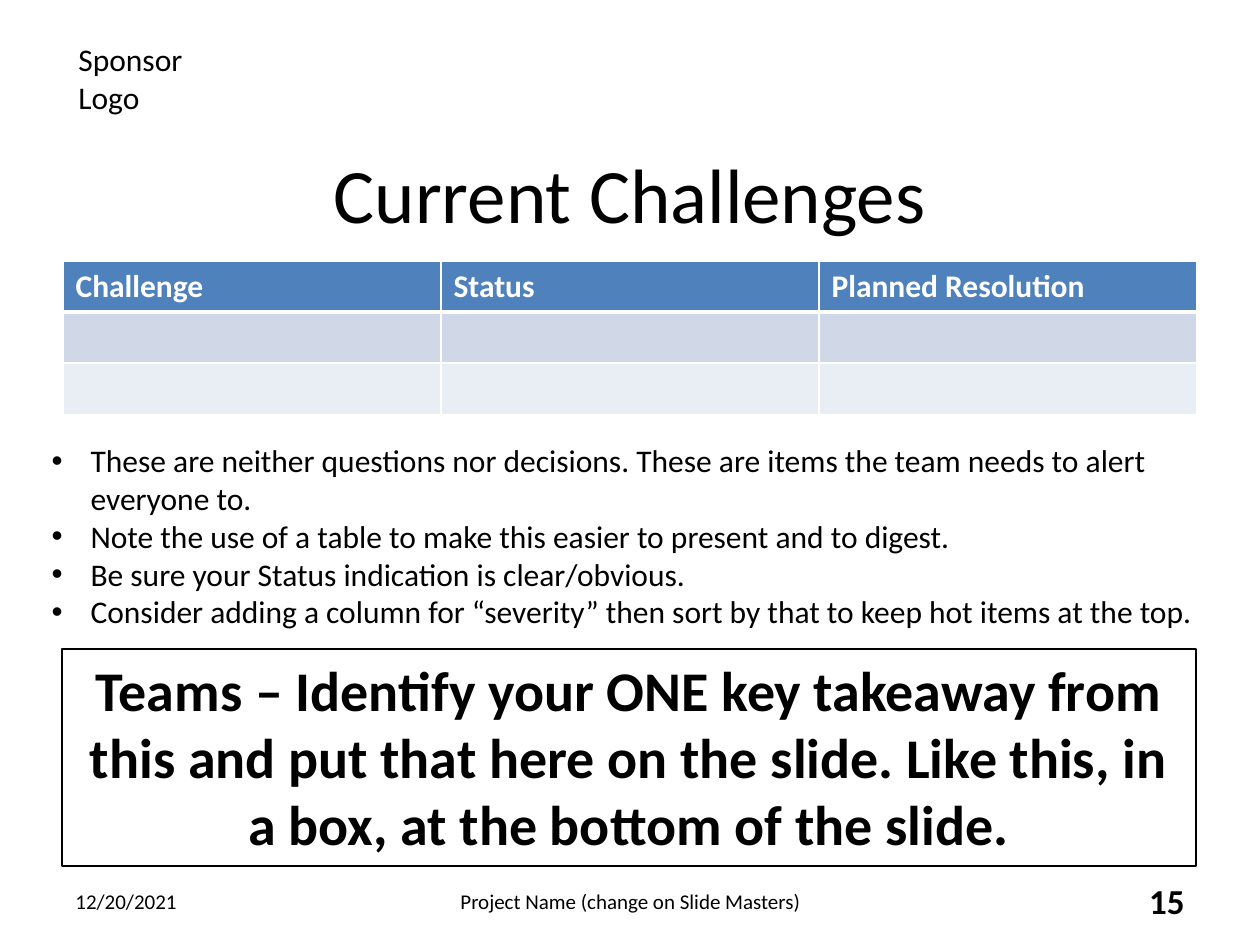
from pptx import Presentation
from pptx.dml.color import RGBColor
from pptx.enum.shapes import MSO_SHAPE
from pptx.enum.text import MSO_ANCHOR, MSO_AUTO_SIZE, PP_ALIGN
from pptx.oxml import parse_xml
from pptx.oxml.ns import nsdecls
from pptx.util import Emu, Pt

BLACK = RGBColor(0x00, 0x00, 0x00)
WHITE = RGBColor(0xFF, 0xFF, 0xFF)
HEADER_BLUE = RGBColor(0x4F, 0x81, 0xBD)
BAND_DARK = RGBColor(0xD0, 0xD8, 0xE8)
BAND_LIGHT = RGBColor(0xE9, 0xED, 0xF4)


def px(count):
    """Turn slide pixels (126 to the inch) into EMU."""
    return Emu(round(count * 914400 / 126))


def write(frame, text, size=18, bold=False, color=BLACK, align=PP_ALIGN.LEFT,
          anchor=MSO_ANCHOR.TOP, bullet=None):
    """Fill a text frame, one paragraph for each line of text."""
    frame.word_wrap = True
    frame.auto_size = MSO_AUTO_SIZE.NONE
    frame.vertical_anchor = anchor
    for index, line in enumerate(text.split("\n")):
        para = frame.add_paragraph() if index else frame.paragraphs[0]
        para.alignment = align
        para.space_before = Pt(0)
        if bullet:
            props = para._p.get_or_add_pPr()
            props.set("marL", str(px(39)))
            props.set("indent", str(-px(39)))
            props.append(parse_xml(f'<a:buFont {nsdecls("a")} typeface="Arial"/>'))
            props.append(parse_xml(f'<a:buChar {nsdecls("a")} char="{bullet}"/>'))
        span = para.add_run()
        span.text = line
        span.font.name = "Calibri"
        span.font.size = Pt(size)
        span.font.bold = bold
        span.font.color.rgb = color


deck = Presentation()
deck.slide_width, deck.slide_height = px(1260), px(945)
page = deck.slides.add_slide(deck.slide_layouts[1])

# Title and bullet list
title, body = page.placeholders
title.left, title.top, title.width, title.height = px(63), px(141), px(1134), px(103)
write(title.text_frame, "Current Challenges", size=44, align=PP_ALIGN.CENTER,
      anchor=MSO_ANCHOR.MIDDLE)

body.left, body.top, body.width, body.height = px(39), px(435), px(1181), px(204)
write(body.text_frame, "\n".join([
    "These are neither questions nor decisions. These are items the team needs to alert everyone to.",
    "Note the use of a table to make this easier to present and to digest.",
    "Be sure your Status indication is clear/obvious.",
    "Consider adding a column for “severity” then sort by that to keep hot items at the top.",
]), bullet="•")

# Challenge table
headings = ["Challenge", "Status", "Planned Resolution"]
row_fills = [HEADER_BLUE, BAND_DARK, BAND_LIGHT]
table = page.shapes.add_table(len(row_fills), len(headings),
                              px(63), px(261), px(1134), px(153)).table
for row, fill in enumerate(row_fills):
    table.rows[row].height = px(51)
    for column, heading in enumerate(headings):
        cell = table.cell(row, column)
        cell.fill.solid()
        cell.fill.fore_color.rgb = fill
        if row == 0:
            write(cell.text_frame, heading, bold=True, color=WHITE)
        widths = {"L": 1, "R": 1, "T": 3 if row == 1 else 1, "B": 3 if row == 0 else 1}
        for index, (side, width) in enumerate(widths.items()):
            cell._tc.get_or_add_tcPr().insert(index, parse_xml(
                f'<a:ln{side} {nsdecls("a")} w="{Pt(width)}"><a:solidFill>'
                f'<a:srgbClr val="{WHITE}"/></a:solidFill></a:ln{side}>'))

# Takeaway box
takeaway = page.shapes.add_shape(MSO_SHAPE.RECTANGLE, px(62), px(649), px(1134), px(217))
takeaway.shadow.inherit = False
takeaway.fill.background()
takeaway.line.color.rgb = BLACK
takeaway.line.width = Pt(0.75)
write(takeaway.text_frame,
      "Teams – Identify your ONE key takeaway from this and put that here on the slide. "
      "Like this, in a box, at the bottom of the slide.",
      size=32, bold=True, align=PP_ALIGN.CENTER)

# Sponsor label and footer
middle = MSO_ANCHOR.MIDDLE
labels = [
    ("Sponsor\nLogo", (66, 34, 193, 89), {}),
    ("12/20/2021", (63, 876, 294, 50), dict(size=12, anchor=middle)),
    ("Project Name (change on Slide Masters)", (431, 876, 399, 50),
     dict(size=12, anchor=middle, align=PP_ALIGN.CENTER)),
    ("15", (903, 876, 294, 50),
     dict(size=20, bold=True, anchor=middle, align=PP_ALIGN.RIGHT)),
]
for text, place, style in labels:
    box = page.shapes.add_textbox(*map(px, place))
    write(box.text_frame, text, **style)

deck.save("out.pptx")
